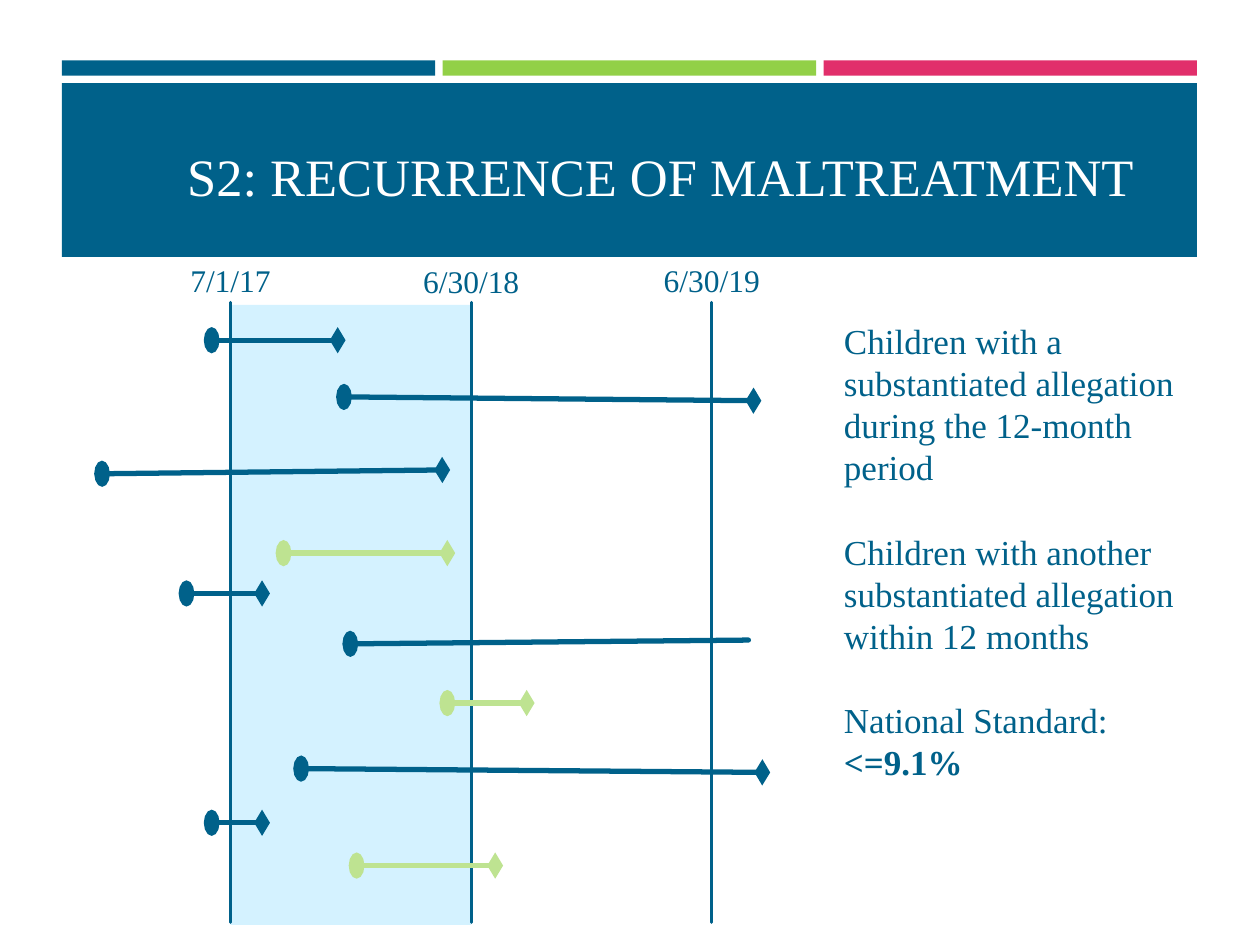
from lxml import etree
from pptx import Presentation
from pptx.dml.color import RGBColor
from pptx.enum.shapes import MSO_CONNECTOR, MSO_SHAPE
from pptx.enum.text import MSO_ANCHOR, MSO_AUTO_SIZE, PP_ALIGN
from pptx.oxml.ns import qn
from pptx.util import Inches, Pt

RECT = MSO_SHAPE.RECTANGLE
LINE = MSO_CONNECTOR.STRAIGHT
CENTER = PP_ALIGN.CENTER
MIDDLE = MSO_ANCHOR.MIDDLE
FIXED = MSO_AUTO_SIZE.NONE

BLUE = RGBColor(0x00, 0x61, 0x8A)
GREEN = RGBColor(0x92, 0xD0, 0x47)
PINK = RGBColor(0xE1, 0x2F, 0x6B)
LIME = RGBColor(0xBE, 0xE3, 0x91)
SKY = RGBColor(0xB5, 0xE9, 0xFF)
WHITE = RGBColor(0xFF, 0xFF, 0xFF)

COLS, ROWS = 100, 75
LEFT, WIDTH, GAP = 4.9, 90.1, 0.6
START, YEAR = 18.3, 19.1  # column of the first date, columns per year
TOP, BOTTOM = 24, 73.2

DATES = [("7/1/17", 20.2), ("6/30/18", 20.3), ("6/30/19", 20.2)]

# first column, row, last column, row, colour, end mark
CASES = [
    (16.8, 27, 26.8, 27, BLUE, "diamond"),
    (27.3, 31.5, 59.8, 31.8, BLUE, "diamond"),
    (8.1, 37.6, 35.1, 37.3, BLUE, "diamond"),
    (22.5, 43.9, 35.5, 43.9, LIME, "diamond"),
    (14.8, 47.1, 20.8, 47.1, BLUE, "diamond"),
    (27.8, 51.1, 59.4, 50.8, BLUE, None),
    (35.5, 55.8, 41.8, 55.8, LIME, "diamond"),
    (23.9, 61, 60.5, 61.3, BLUE, "diamond"),
    (16.8, 65.3, 20.8, 65.3, BLUE, "diamond"),
    (28.3, 68.7, 39.3, 68.7, LIME, "diamond"),
]

NOTES = [
    ["Children with a substantiated allegation during the 12-month period"],
    ["Children with another substantiated allegation within 12 months"],
    ["National Standard: ", "<=9.1%"],
]


class Deck:
    """Holds the style and the current slide; lengths are grid columns and rows."""

    font = "Times New Roman"

    def __init__(self):
        self.prs = Presentation()
        self.prs.slide_width, self.prs.slide_height = Inches(10), Inches(7.5)
        self.slide = self.prs.slides.add_slide(self.prs.slide_layouts[5])
        self.shapes = self.slide.shapes

    def grid(self, *spots):
        """Turn column, row, column, row into slide lengths."""
        cell = (self.prs.slide_width / COLS, self.prs.slide_height / ROWS)
        return [round(n * cell[i % 2]) for i, n in enumerate(spots)]

    def style(self, para, size, color):
        for run in para.runs:
            run.font.name, run.font.size = self.font, Pt(size)
            run.font.color.rgb = color

    def title(self, text, *area):
        box = self.shapes.title
        self.shapes.element.append(box.element)  # bring in front of the band
        box.left, box.top, box.width, box.height = self.grid(*area)
        frame = box.text_frame
        frame.text = text
        frame.auto_size, frame.vertical_anchor = FIXED, MIDDLE
        para = frame.paragraphs[0]
        para.alignment, para.line_spacing = CENTER, 1.2
        para._p.get_or_add_pPr().set("marL", str(Inches(0.5)))
        self.style(para, 30, WHITE)

    def block(self, color, *area, alpha=None):
        box = self.shapes.add_shape(RECT, *self.grid(*area))
        box.shadow.inherit = False
        box.fill.solid()
        box.fill.fore_color.rgb = color
        box.line.fill.background()
        if alpha:
            fill = box.element.spPr.find(".//" + qn("a:srgbClr"))
            etree.SubElement(fill, qn("a:alpha"), val=str(alpha * 1000))

    def line(self, color, width, *ends, head=None, tail=None):
        link = self.shapes.add_connector(LINE, *self.grid(*ends))
        link.line.color.rgb, link.line.width = color, Pt(width)
        ln = link.line._get_or_add_ln()
        ln.set("cap", "rnd")
        etree.SubElement(ln, qn("a:round"))
        for tag, mark in (("a:headEnd", head), ("a:tailEnd", tail)):
            if mark:
                etree.SubElement(ln, qn(tag), type=mark, w="lg", len="med")
        etree.SubElement(link._element.spPr, qn("a:effectLst"))

    def label(self, text, mid, top):
        """Put a one-line caption centred on a column."""
        frame = self.shapes.add_textbox(*self.grid(mid - 5.2, top, 10.4, 4)).text_frame
        frame.word_wrap = False
        frame.text = text
        frame.paragraphs[0].alignment = CENTER
        self.style(frame.paragraphs[0], 18, BLUE)

    def notes(self, items, *area):
        """Write paragraphs; a second part of an item is bold."""
        frame = self.shapes.add_textbox(*self.grid(*area)).text_frame
        frame.word_wrap = True
        for i, parts in enumerate(items):
            para = frame.add_paragraph() if i else frame.paragraphs[0]
            para.line_spacing = Pt(24)
            if i:
                para.space_before = Pt(24)
            for j, part in enumerate(parts):
                run = para.add_run()
                run.text = part
                if j:
                    run.font.bold = True
            self.style(para, 20, BLUE)


def main():
    deck = Deck()
    bar = (WIDTH - 2 * GAP) / 3
    for i, color in enumerate((BLUE, GREEN, PINK)):
        deck.block(color, LEFT + i * (bar + GAP), 4.8, bar, 1.2)
    deck.block(BLUE, LEFT, 6.6, WIDTH, 13.8)
    deck.title("S2: RECURRENCE OF MALTREATMENT", LEFT, 6.7, WIDTH, 13.5)

    deck.block(SKY, START, 24.2, YEAR, 49.2, alpha=57)
    for i, (date, top) in enumerate(DATES):
        col = START + i * YEAR
        deck.line(BLUE, 1.75, col, TOP, col, BOTTOM)
        deck.label(date, col, top)
    for *ends, color, tail in CASES:
        deck.line(color, 3, *ends, head="oval", tail=tail)

    deck.notes(NOTES, 66, 24.9, 29, 38)
    deck.prs.save("out.pptx")


if __name__ == "__main__":
    main()
